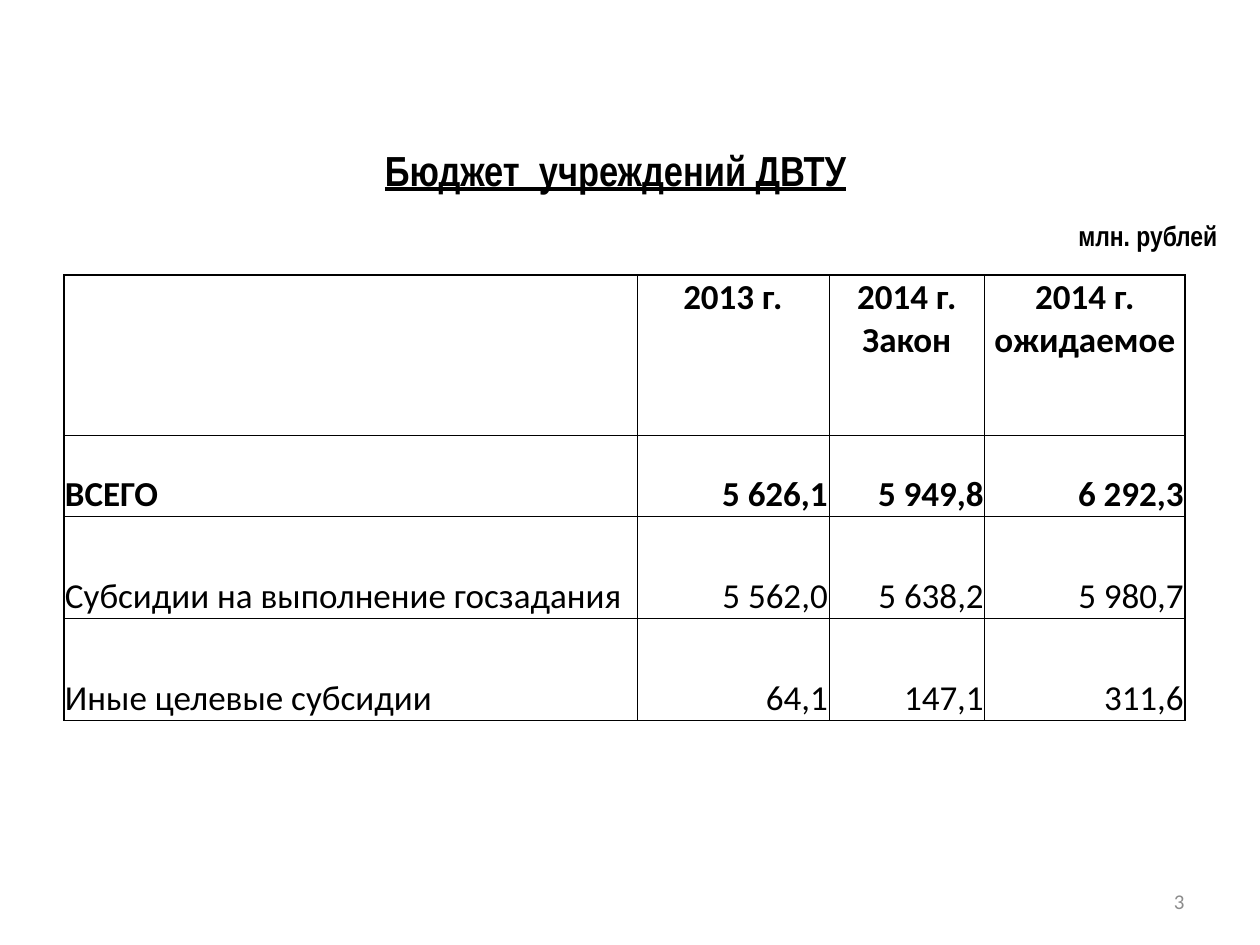
from lxml import etree
from pptx import Presentation
from pptx.dml.color import RGBColor
from pptx.enum.text import MSO_ANCHOR, MSO_AUTO_SIZE, PP_ALIGN
from pptx.oxml.ns import qn
from pptx.util import Emu, Pt

LEFT, CENTER, RIGHT = PP_ALIGN.LEFT, PP_ALIGN.CENTER, PP_ALIGN.RIGHT
TOP, MIDDLE, BOTTOM = MSO_ANCHOR.TOP, MSO_ANCHOR.MIDDLE, MSO_ANCHOR.BOTTOM
NO_FIT = MSO_AUTO_SIZE.NONE
BLACK = RGBColor(0x00, 0x00, 0x00)
GRAY = RGBColor(0x8C, 0x8C, 0x8C)
HEADING_FONT, BODY_FONT = "Arial Narrow", "Calibri"

TITLE = "Бюджет  учреждений ДВТУ"
UNITS = "млн. рублей"
PAGE = "3"
BUDGET = [
    ("", "2013 г.", "2014 г. Закон", "2014 г. ожидаемое"),
    ("ВСЕГО", "5 626,1", "5 949,8", "6 292,3"),
    ("Субсидии на выполнение госзадания", "5 562,0", "5 638,2", "5 980,7"),
    ("Иные целевые субсидии", "64,1", "147,1", "311,6"),
]
BOLD_ROWS = 2

TITLE_BOX = (174, 145, 883, 59)
UNITS_BOX = (1053, 215, 190, 48)
PAGE_BOX = (903, 876, 294, 50)
TABLE_ORIGIN = (64, 275)
COLUMN_WIDTHS = (573, 192, 156, 200)
ROW_HEIGHTS = (160, 81, 102, 102)
OUTER_LINE, INNER_LINE = Pt(1), Pt(0.5)


def px(length):
    return Emu(round(length * 914400 / 126))


def write(frame, text, align, size, font, color=BLACK, bold=False):
    frame.word_wrap = True
    paragraph = frame.paragraphs[0]
    paragraph.text = text
    paragraph.alignment = align
    paragraph.font.size = Pt(size)
    paragraph.font.name = font
    paragraph.font.bold = bold
    paragraph.font.color.rgb = color
    return paragraph


def fill_box(shape, box, *text_format, **options):
    shape.left, shape.top, shape.width, shape.height = map(px, box)
    frame = shape.text_frame
    frame.auto_size = NO_FIT
    frame.vertical_anchor = MIDDLE
    return write(frame, *text_format, **options)


def draw_borders(cell, widths):
    properties = cell._tc.get_or_add_tcPr()
    for position, (side, width) in enumerate(widths.items()):
        line = etree.Element(qn(f"a:ln{side}"), w=str(width))
        fill = etree.SubElement(line, qn("a:solidFill"))
        etree.SubElement(fill, qn("a:srgbClr"), val=str(BLACK))
        properties.insert(position, line)


def add_budget_table(slide):
    last_row, last_column = len(ROW_HEIGHTS) - 1, len(COLUMN_WIDTHS) - 1
    size = (sum(COLUMN_WIDTHS), sum(ROW_HEIGHTS))
    table = slide.shapes.add_table(
        last_row + 1, last_column + 1, *map(px, TABLE_ORIGIN + size)).table
    table.first_row = table.horz_banding = False
    for column, width in zip(table.columns, COLUMN_WIDTHS):
        column.width = px(width)
    for row, height in zip(table.rows, ROW_HEIGHTS):
        row.height = px(height)

    for r, values in enumerate(BUDGET):
        for c, value in enumerate(values):
            cell = table.cell(r, c)
            cell.fill.background()
            cell.margin_left = cell.margin_right = cell.margin_top = px(1)
            cell.margin_bottom = 0
            cell.vertical_anchor = TOP if r == 0 else BOTTOM
            align = CENTER if r == 0 else LEFT if c == 0 else RIGHT
            write(cell.text_frame, value, align, 20, BODY_FONT, bold=r < BOLD_ROWS)
            draw_borders(cell, {
                "L": OUTER_LINE if c == 0 else INNER_LINE,
                "R": OUTER_LINE if c == last_column else INNER_LINE,
                "T": OUTER_LINE if r == 0 else INNER_LINE,
                "B": INNER_LINE,
            })


def main():
    deck = Presentation()
    deck.slide_width, deck.slide_height = px(1260), px(945)
    slide = deck.slides.add_slide(deck.slide_layouts[5])

    title = fill_box(slide.shapes.title, TITLE_BOX, TITLE, CENTER, 24,
                     HEADING_FONT, bold=True)
    title.font.underline = True
    title.line_spacing = 0.8
    units = fill_box(slide.shapes.add_textbox(0, 0, 0, 0), UNITS_BOX, UNITS,
                     CENTER, 16, HEADING_FONT, bold=True)
    units.line_spacing = 0.8
    add_budget_table(slide)
    fill_box(slide.shapes.add_textbox(0, 0, 0, 0), PAGE_BOX, PAGE,
             RIGHT, 12, BODY_FONT, color=GRAY)
    deck.save("out.pptx")


if __name__ == "__main__":
    main()
